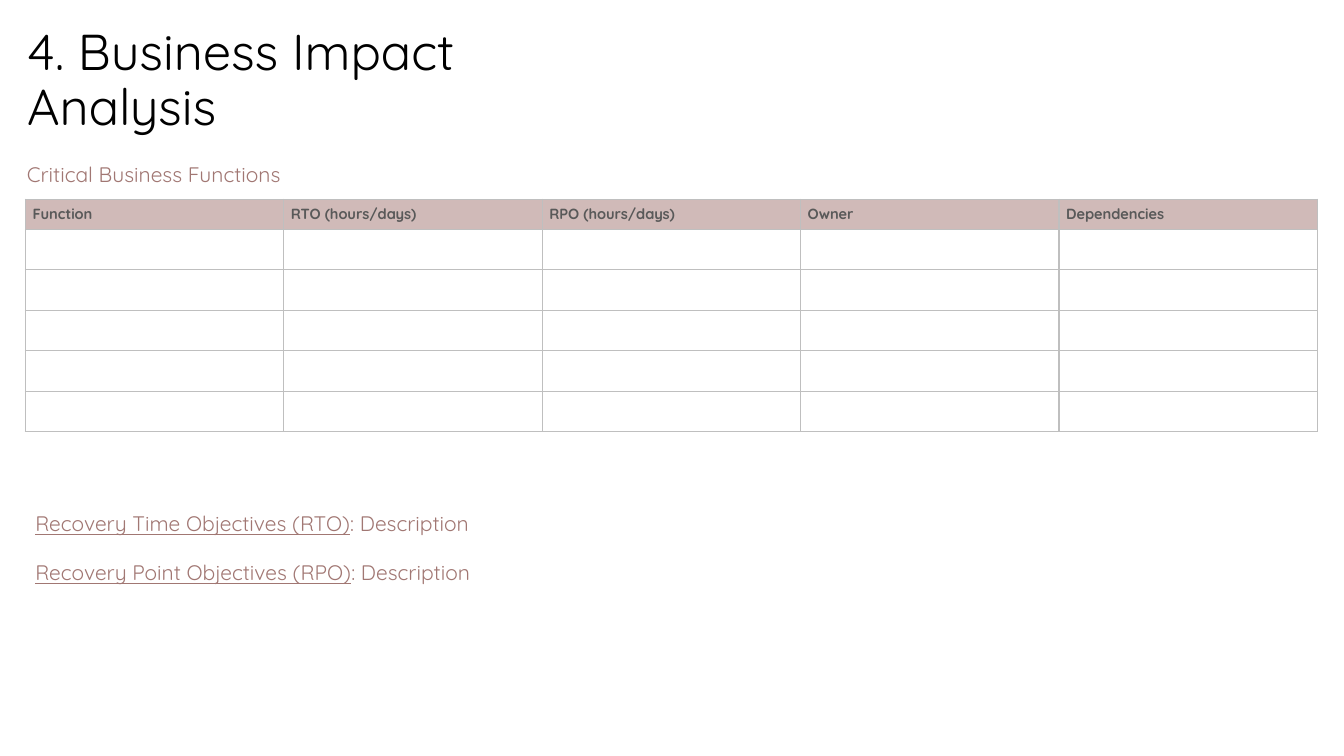
from dataclasses import dataclass

from lxml.etree import SubElement
from pptx import Presentation
from pptx.dml.color import RGBColor
from pptx.enum.text import MSO_ANCHOR, MSO_AUTO_SIZE, PP_ALIGN
from pptx.oxml.ns import qn
from pptx.util import Cm, Pt


@dataclass(frozen=True)
class Theme:
    font: str = "Quicksand"
    black: str = "000000"
    accent: str = "A17773"
    header_text: str = "595959"
    header_fill: str = "D0BAB8"
    white: str = "FFFFFF"
    border: str = "BFBFBF"
    title_size: float = 36
    body_size: float = 15
    header_size: float = 10.5


theme = Theme()


def style(p, size, color, bold=False):
    p.font.name = theme.font
    p.font.size = Pt(size)
    p.font.bold = bold
    p.font.color.rgb = RGBColor.from_string(color)


def add_borders(cell):
    tcPr = cell._tc.get_or_add_tcPr()
    for side in ("a:lnL", "a:lnR", "a:lnT", "a:lnB"):
        ln = SubElement(tcPr, qn(side), w=str(Pt(1)))
        fill = SubElement(ln, qn("a:solidFill"))
        SubElement(fill, qn("a:srgbClr"), val=theme.border)


prs = Presentation()
prs.slide_width, prs.slide_height = Cm(33.87), Cm(19.05)
s = prs.slides.add_slide(prs.slide_layouts[5])

# Title
title = s.shapes.title
title.left, title.top, title.width, title.height = Cm(0.43), Cm(0.38), Cm(12.04), Cm(3.35)
tf = title.text_frame
tf.text = "4. Business Impact Analysis"
tf.word_wrap = True
tf.auto_size = MSO_AUTO_SIZE.NONE
tf.vertical_anchor = MSO_ANCHOR.MIDDLE
p = tf.paragraphs[0]
p.alignment = PP_ALIGN.LEFT
p.line_spacing = 0.9
p.space_after = Pt(6)
style(p, theme.title_size, theme.black)

# Subtitle
sp = s.shapes.add_textbox(Cm(0.43), Cm(3.94), Cm(32.56), Cm(0.89))
tf = sp.text_frame
tf.word_wrap = True
tf.vertical_anchor = MSO_ANCHOR.MIDDLE
p = tf.paragraphs[0]
p.text = "Critical Business Functions"
style(p, theme.body_size, theme.accent)

# Critical functions table
headers = ["Function", "RTO (hours/days)", "RPO (hours/days)", "Owner", "Dependencies"]
blank_rows = 5
table = s.shapes.add_table(
    1 + blank_rows, len(headers), Cm(0.64), Cm(5.02), Cm(32.56), Cm(5.86)
).table
for i, row in enumerate(table.rows):
    row.height = Cm(1.02) if i else Cm(0.76)
    for cell in row.cells:
        cell.margin_left = cell.margin_right = Cm(0.18)
        cell.margin_top = cell.margin_bottom = 0
        cell.vertical_anchor = MSO_ANCHOR.MIDDLE
        add_borders(cell)
        cell.fill.solid()
        cell.fill.fore_color.rgb = RGBColor.from_string(theme.white if i else theme.header_fill)
for cell, text in zip(table.rows[0].cells, headers):
    cell.text = text
    p = cell.text_frame.paragraphs[0]
    p.space_after = Pt(8)
    style(p, theme.header_size, theme.header_text, bold=True)

# Recovery objectives
sp = s.shapes.add_textbox(Cm(0.64), Cm(12.75), Cm(32.56), Cm(2.95))
tf = sp.text_frame
tf.word_wrap = True
tf.vertical_anchor = MSO_ANCHOR.TOP
objectives = ["Recovery Time Objectives (RTO)", "Recovery Point Objectives (RPO)"]
for i, objective in enumerate(objectives):
    p = tf.add_paragraph() if i else tf.paragraphs[0]
    p.space_after = Pt(17)
    style(p, theme.body_size, theme.accent)
    r = p.add_run()
    r.text = objective
    r.font.underline = True
    p.add_run().text = ": Description"

prs.save("out.pptx")
